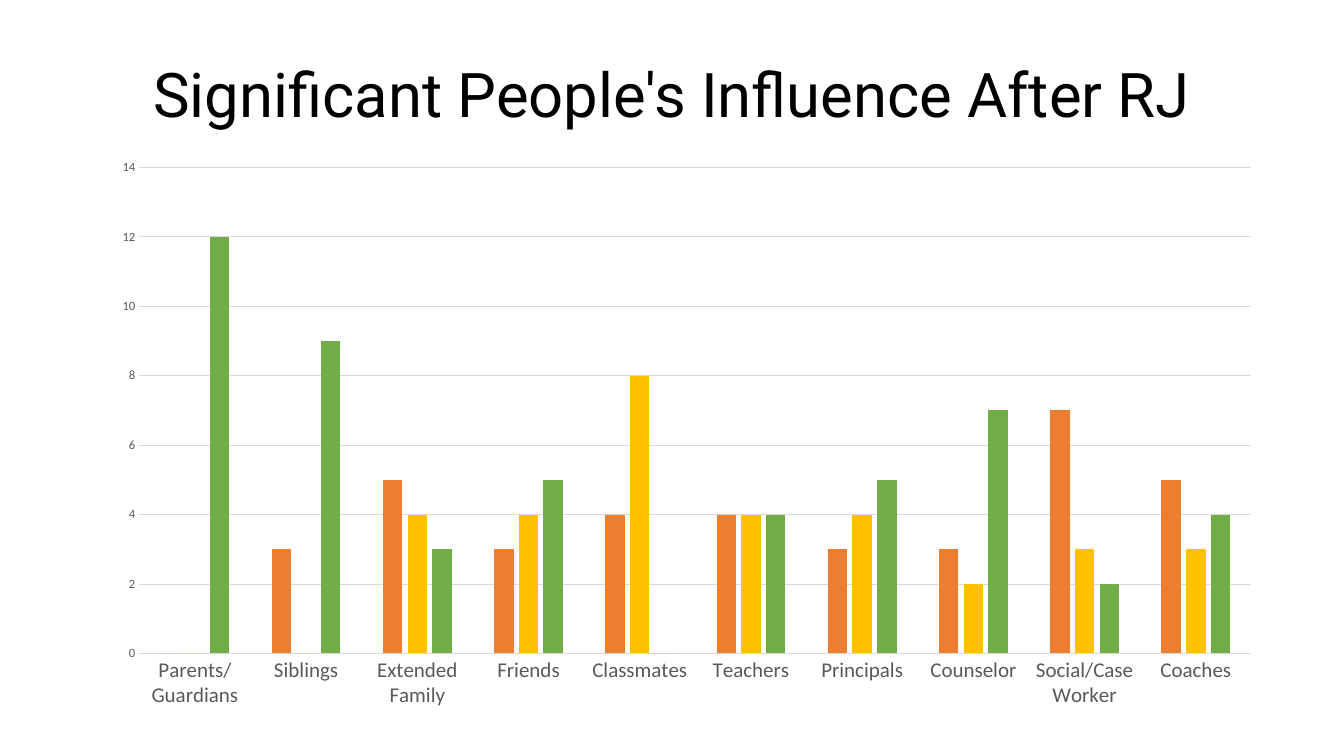
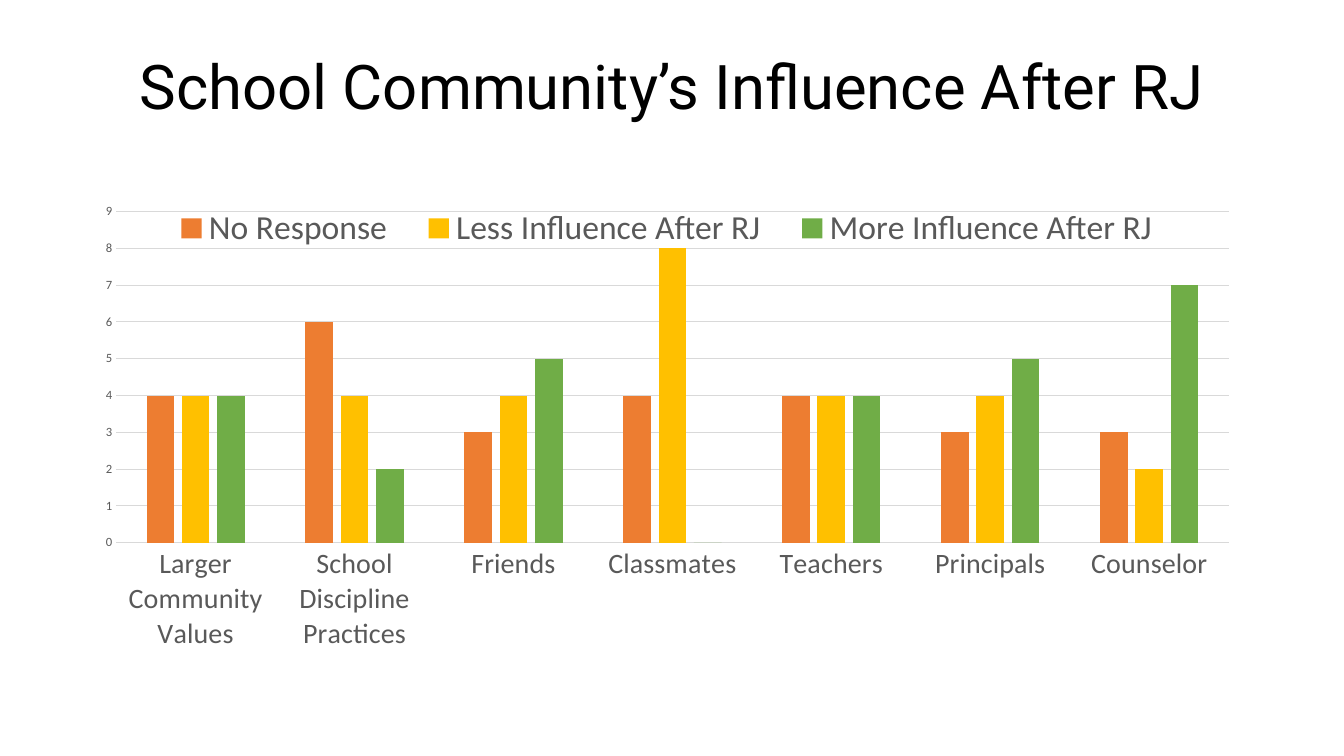
from lxml import etree
from pptx import Presentation
from pptx import util as u
from pptx.chart.data import CategoryChartData
from pptx.dml.color import RGBColor
from pptx.enum import chart as charts, text
from pptx.oxml.ns import qn

SCALE = 12192000 / 1344
BLACK = RGBColor(0x00, 0x00, 0x00)
GRAY = RGBColor(0x59, 0x59, 0x59)
RULE = RGBColor(0xD9, 0xD9, 0xD9)
ORANGE = RGBColor(0xED, 0x7D, 0x31)
GOLD = RGBColor(0xFF, 0xC0, 0x00)
GREEN = RGBColor(0x70, 0xAD, 0x47)

LEFT, WIDTH = 93, 1159
SERIES = [
    ("No Response", ORANGE),
    ("Less Influence After RJ", GOLD),
    ("More Influence After RJ", GREEN),
]
SLIDES = [
    {
        "title": "Significant People's Influence After RJ",
        "title_top": 40,
        "title_height": 116,
        "chart_top": 156,
        "chart_height": 572,
        "plot": (0.04, 0.02, 0.96, 0.85),
        "legend": None,
        "label_size": 15,
        "top_value": 14,
        "step": 2,
        "rows": [
            ("Parents/ Guardians", 0, 0, 12),
            ("Siblings", 3, 0, 9),
            ("Extended Family", 5, 4, 3),
            ("Friends", 3, 4, 5),
            ("Classmates", 4, 8, 0),
            ("Teachers", 4, 4, 4),
            ("Principals", 3, 4, 5),
            ("Counselor", 3, 2, 7),
            ("Social/Case Worker", 7, 3, 2),
            ("Coaches", 5, 3, 4),
        ],
    },
    {
        "title": "School Community’s Influence After RJ",
        "title_top": 17,
        "title_height": 145,
        "chart_top": 202,
        "chart_height": 480,
        "plot": (0.02, 0.02, 0.96, 0.69),
        "legend": (0.05, 0.01, 0.89, 0.09),
        "label_size": 20,
        "top_value": 9,
        "step": 1,
        "rows": [
            ("Larger Community Values", 4, 4, 4),
            ("School Discipline Practices", 6, 4, 2),
            ("Friends", 3, 4, 5),
            ("Classmates", 4, 8, 0),
            ("Teachers", 4, 4, 4),
            ("Principals", 3, 4, 5),
            ("Counselor", 3, 2, 7),
        ],
    },
]


def px(*lengths):
    return [u.Emu(round(length * SCALE)) for length in lengths]


def set_layout(parent, position, bounds, target=None):
    for old in parent.findall(qn("c:layout")):
        parent.remove(old)
    layout = etree.Element(qn("c:layout"))
    manual = etree.SubElement(layout, qn("c:manualLayout"))
    settings = [("layoutTarget", target)] if target else []
    settings += [("xMode", "edge"), ("yMode", "edge"), *zip("xywh", bounds)]
    for tag, value in settings:
        etree.SubElement(manual, qn(f"c:{tag}")).set("val", str(value))
    parent.insert(position, layout)


deck = Presentation()
deck.slide_width, deck.slide_height = px(1344, 756)

for content in SLIDES:
    page = deck.slides.add_slide(deck.slide_layouts[6])

    box = page.shapes.add_textbox(
        *px(LEFT, content["title_top"], WIDTH, content["title_height"]))
    box.text_frame.word_wrap = True
    box.text_frame.vertical_anchor = text.MSO_ANCHOR.MIDDLE
    para = box.text_frame.paragraphs[0]
    para.text = content["title"]
    para.alignment = text.PP_ALIGN.CENTER
    para.line_spacing = 0.9
    para.font.name = "Roboto"
    para.font.size = u.Pt(44)
    para.font.color.rgb = BLACK

    names, *columns = zip(*content["rows"])
    data = CategoryChartData()
    data.categories = names
    for (name, color), values in zip(SERIES, columns):
        data.add_series(name, values)
    chart = page.shapes.add_chart(
        charts.XL_CHART_TYPE.COLUMN_CLUSTERED,
        *px(LEFT, content["chart_top"], WIDTH, content["chart_height"]),
        data).chart
    chart.has_title = False
    chart.font.name = "Calibri"
    chart.font.size = u.Pt(10)
    chart.font.color.rgb = BLACK

    plot = chart.plots[0]
    plot.vary_by_categories = False
    plot.gap_width = 219
    plot.overlap = -27
    for series, (name, color) in zip(plot.series, SERIES):
        series.format.fill.solid()
        series.format.fill.fore_color.rgb = color

    axes = [(chart.category_axis, content["label_size"]), (chart.value_axis, 9)]
    for axis, size in axes:
        axis.major_tick_mark = charts.XL_TICK_MARK.NONE
        axis.minor_tick_mark = charts.XL_TICK_MARK.NONE
        axis.tick_labels.font.name = "Calibri"
        axis.tick_labels.font.size = u.Pt(size)
        axis.tick_labels.font.color.rgb = GRAY
    chart.value_axis.minimum_scale = 0
    chart.value_axis.maximum_scale = content["top_value"]
    chart.value_axis.major_unit = content["step"]
    chart.value_axis.has_major_gridlines = True
    chart.value_axis.format.line.fill.background()
    for line in (chart.category_axis.format.line,
                 chart.value_axis.major_gridlines.format.line):
        line.color.rgb = RULE
        line.width = u.Pt(0.75)

    set_layout(plot._element.getparent(), 0, content["plot"], "inner")
    chart.has_legend = content["legend"] is not None
    if chart.has_legend:
        legend = chart.legend
        legend.position = charts.XL_LEGEND_POSITION.BOTTOM
        legend.include_in_layout = False
        legend.font.name = "Calibri"
        legend.font.size = u.Pt(24)
        legend.font.color.rgb = GRAY
        set_layout(legend._element, 1, content["legend"])

deck.save("out.pptx")
